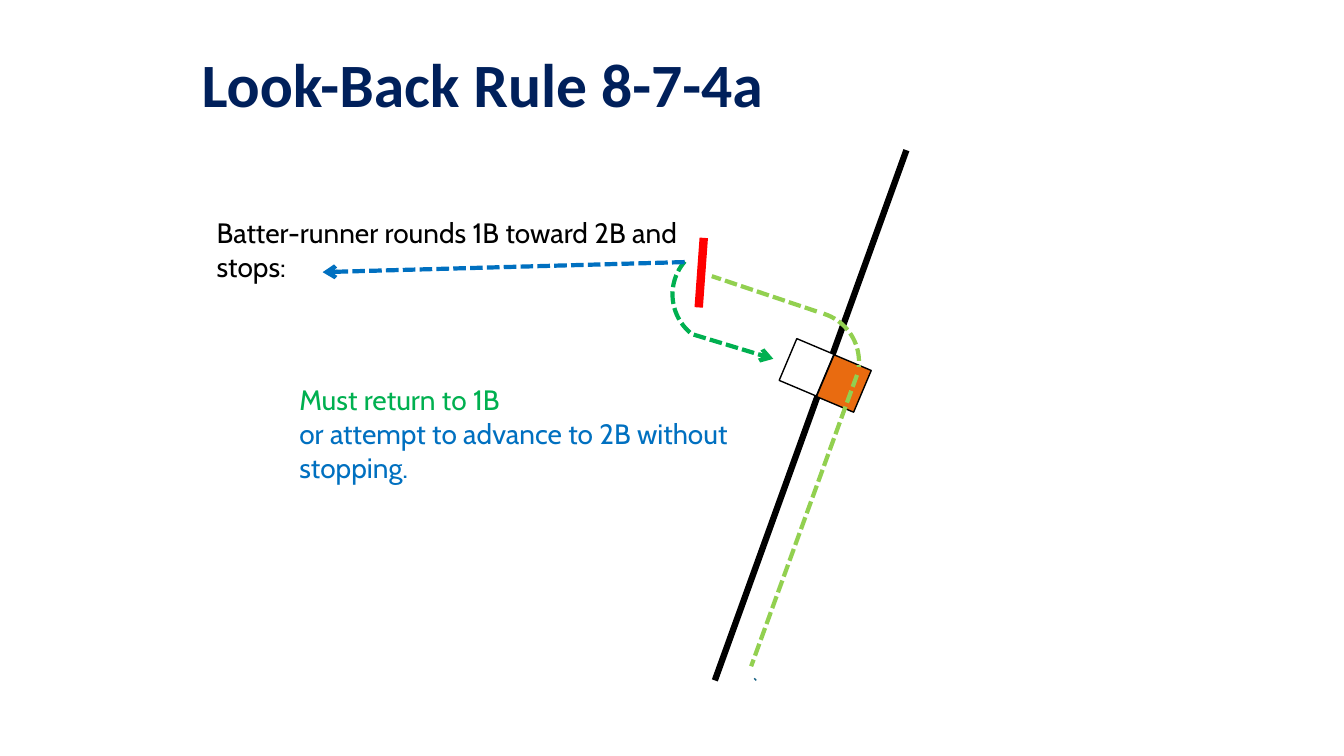
from lxml.etree import SubElement
from pptx import Presentation
from pptx.dml.color import RGBColor
from pptx.enum.dml import MSO_LINE as Dash
from pptx.enum.shapes import MSO_CONNECTOR as Link, MSO_SHAPE as Shape
from pptx.enum.text import MSO_ANCHOR as Anchor, MSO_AUTO_SIZE as Fit
from pptx.oxml.ns import qn
from pptx.util import Inches, Pt

NAVY = RGBColor(0x00, 0x20, 0x5B)
BLACK = RGBColor(0x00, 0x00, 0x00)
WHITE = RGBColor(0xFF, 0xFF, 0xFF)
ORANGE = RGBColor(0xE9, 0x6B, 0x10)
RED = RGBColor(0xFF, 0x00, 0x00)
LIME = RGBColor(0x92, 0xD0, 0x50)
GREEN = RGBColor(0x00, 0xB0, 0x50)
BLUE = RGBColor(0x00, 0x70, 0xC0)
TEAL = RGBColor(0x15, 0x60, 0x82)

# Content
TITLE = "Look-Back Rule 8-7-4a"
NOTES = [  # box, paragraphs with colour
    ((2.87, 3.75, 4.48, 1.11), [
        ("Must return to 1B", GREEN),
        ("or attempt to advance to 2B without stopping.", BLUE)]),
    ((2.05, 2.09, 4.87, 0.77), [
        ("Batter-runner rounds 1B toward 2B and stops:", BLACK)]),
]
FOUL = ((7.09, 6.75), (8.99, 1.49))
BASES = [((7.8, 3.42), WHITE), ((8.17, 3.58), ORANGE)]
BASE_SIZE, BASE_TURN = (0.4, 0.45), 22.9
STOP = ((6.98, 2.36), (6.93, 3.05))
TICK = ((7.5, 6.75), (7.48, 6.73))
RUN_UP = ((8.5, 3.72), (7.45, 6.61))
RUN_OUT = ((8.1, 3.09), (7.06, 2.74))
BACK = ((6.88, 3.32), (7.67, 3.56))
AHEAD = ((6.79, 2.6), (3.2, 2.7))

prs = Presentation()
prs.slide_width, prs.slide_height = Inches(13.33), Inches(7.5)
slide = prs.slides.add_slide(prs.slide_layouts[5])
shapes = slide.shapes


def inch(vals):
    return [Inches(v) for v in vals]


def write(para, text, font="Cabin", size=20, color=BLACK, bold=False):
    run = para.add_run()
    run.text = text
    run.font.name, run.font.size = font, Pt(size)
    run.font.bold, run.font.color.rgb = bold, color


def stroke(part, color, width, dash=False):
    part.line.color.rgb, part.line.width = color, Pt(width)
    if dash:
        part.line.dash_style = Dash.SQUARE_DOT


def draw(ends, color, width=3, dash=True, arrow=False):
    line = shapes.add_connector(Link.STRAIGHT, *inch(ends[0] + ends[1]))
    stroke(line, color, width, dash)
    if arrow:
        SubElement(line.line._get_or_add_ln(), qn("a:tailEnd"), type="arrow")
    SubElement(line._element.spPr, qn("a:effectLst"))


def place(parent, kind, box, turn):
    part = parent.add_shape(kind, *inch(box))
    part.rotation = turn
    part.shadow.inherit = False
    return part


def bend(spot, turn, color, start=None):
    arc = place(shapes, Shape.ARC, spot + (1, 1), turn)
    if start is not None:
        arc.adjustments[0] = start
    arc.fill.background()
    stroke(arc, color, 3, True)


# Title
title = shapes.title
title.left, title.top, title.width, title.height = inch((1.9, 0.19, 9.58, 1.36))
frame = title.text_frame
frame.word_wrap, frame.vertical_anchor = True, Anchor.MIDDLE
head = frame.paragraphs[0]
head.alignment, head.line_spacing = 1, 0.9
write(head, TITLE, font="Calibri", size=44, color=NAVY, bold=True)

# Foul line and double first base
draw(FOUL, BLACK, 4.5, dash=False)
group = shapes.add_group_shape()
for spot, color in BASES:
    base = place(group.shapes, Shape.RECTANGLE, spot + BASE_SIZE, BASE_TURN)
    base.fill.solid()
    base.fill.fore_color.rgb = color
    stroke(base, BLACK, 1)

# Notes
for box, lines in NOTES:
    frame = shapes.add_textbox(*inch(box)).text_frame
    frame.word_wrap, frame.auto_size = True, Fit.SHAPE_TO_FIT_TEXT
    for i, (text, color) in enumerate(lines):
        para = frame.add_paragraph() if i else frame.paragraphs[0]
        write(para, text, color=color)

# Runner's way round first base to the stop
draw(STOP, RED, 6, dash=False)
draw(RUN_UP, LIME)
draw(TICK, TEAL, 1, dash=False)
bend((7.52, 3.09), 5.9, LIME, start=168.79)
draw(RUN_OUT, LIME)

# Choices: back to first, or on to second
bend((6.67, 2.42), 220.8, GREEN)
draw(BACK, GREEN, arrow=True)
draw(AHEAD, BLUE, arrow=True)

prs.save("out.pptx")
